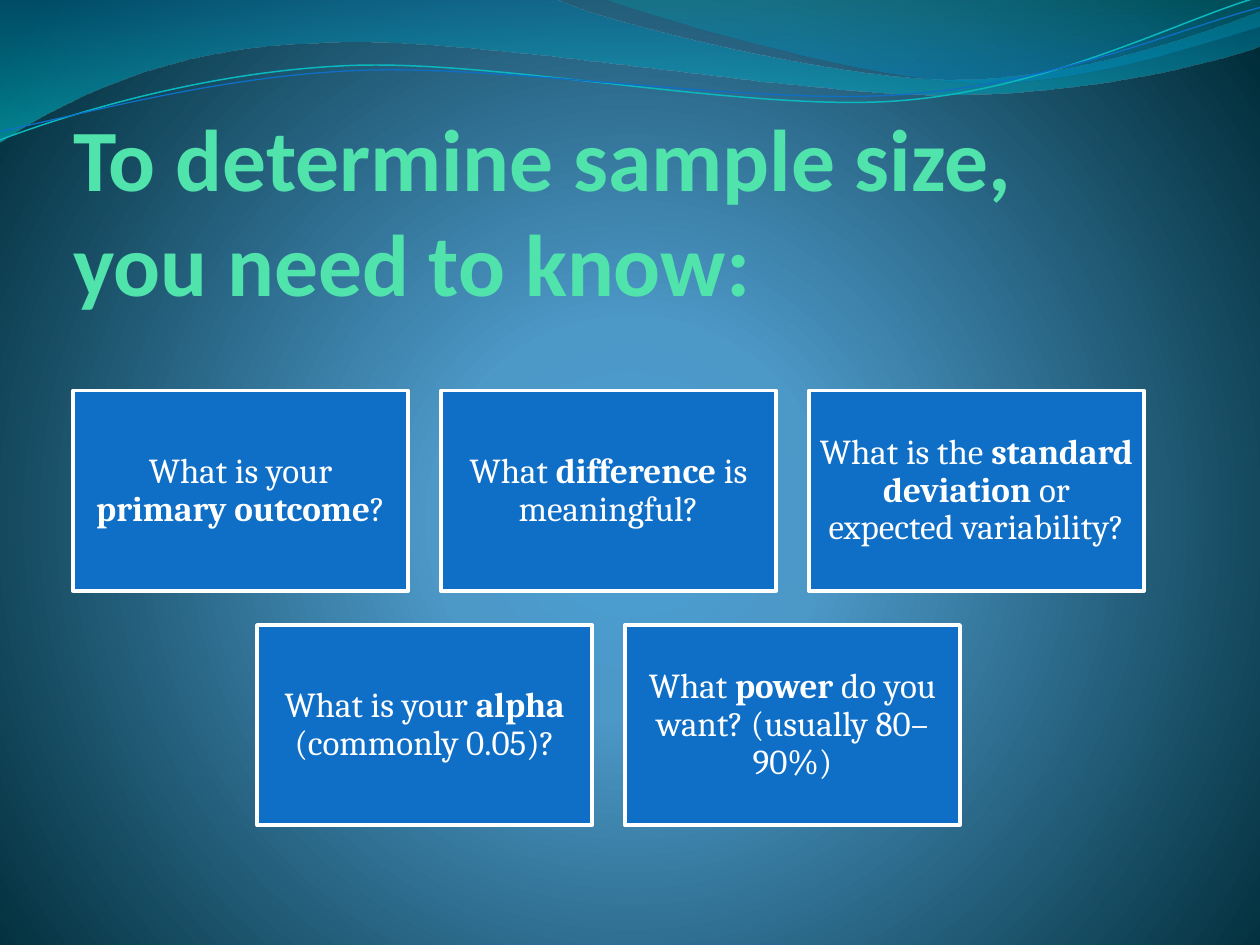
from math import cos, radians, sin

from pptx import Presentation
from pptx.dml.color import RGBColor
from pptx.enum.shapes import MSO_SHAPE
from pptx.enum.text import MSO_ANCHOR, MSO_AUTO_SIZE, PP_ALIGN
from pptx.oxml import parse_xml
from pptx.oxml.ns import nsdecls, qn
from pptx.util import Inches, Pt

WHITE = RGBColor(0xFF, 0xFF, 0xFF)
BLUE = RGBColor(0x0F, 0x6F, 0xC6)
MINT = RGBColor(0x50, 0xE3, 0xAC)
TURQUOISE = RGBColor(0x0A, 0xB8, 0xBF)
SKY = RGBColor(0x4A, 0xA0, 0xD6)
STEEL = RGBColor(0x4C, 0x98, 0xC7)
NIGHT = RGBColor(0x00, 0x2C, 0x38)
OCEAN = RGBColor(0x00, 0x74, 0xA1)
CYAN = RGBColor(0x00, 0xC6, 0xCF)
TEAL = RGBColor(0x00, 0xA1, 0xA9)
AZURE = RGBColor(0x00, 0x8B, 0xBF)

DOWNWARD = '<a:lin ang="5400000" scaled="0"/>'
RADIAL = ('<a:path path="circle"><a:fillToRect l="10000" t="110000" '
          'r="10000" b="100000"/></a:path>')

STRAND_TILT = -2.7
CARD_WIDTH, CARD_HEIGHT = 2.66, 1.59
COLUMN_GAP, ROW_GAP = 0.26, 0.27
CARDS_LEFT, CARDS_TOP, CARDS_WIDTH = 0.58, 3.1, 8.5

BACK_WAVE = [
    (0, 0), (4.4, -0.01),
    (4.76, 0.17, 6.64, 0.63, 7.58, 0.63), (8.53, 0.63, 9.58, 0.26, 10, 0.09),
    (10.01, 0.36),
    (9.83, 0.44, 8.7, 0.76, 7.46, 0.75), (6.22, 0.75, 3.82, 0.28, 2.57, 0.34),
    (1.29, 0.36, 0.46, 0.83, -0.01, 1.13), (0, 0),
]
FRONT_WAVE = [
    (4.79, -0.01),
    (5.09, 0.11, 6.82, 0.62, 7.69, 0.65), (8.56, 0.69, 9.61, 0.32, 10, 0.21),
    (10, 0), (4.79, -0.01),
]
UPPER_STRAND = [
    (0, 1.11),
    (0.48, 0.93, 1.58, 0.57, 2.77, 0.52), (3.95, 0.47, 5.93, 0.89, 7.13, 0.8),
    (8.33, 0.71, 9.38, 0.15, 9.98, -0.02),
]
LOWER_STRAND = [
    (0, 1.04),
    (0.47, 0.96, 1.64, 0.61, 2.83, 0.56), (4.03, 0.51, 5.97, 0.84, 7.17, 0.75),
    (8.36, 0.67, 9.41, 0.21, 10, 0.06),
]

CARD_ROWS = [
    [
        ("What is your ", "primary outcome", "?"),
        ("What ", "difference", " is meaningful?"),
        ("What is the ", "standard deviation", " or expected variability?"),
    ],
    [
        ("What is your ", "alpha", " (commonly 0.05)?"),
        ("What ", "power", " do you want? (usually 80–90%)"),
    ],
]


def apply_gradient(fill, holder, stops, direction):
    """Fill the holder with stops of position, colour and opacity in percent."""
    fill.solid()
    marks = "".join(
        f'<a:gs pos="{position * 1000}"><a:srgbClr val="{color}">'
        f'<a:alpha val="{opacity * 1000}"/></a:srgbClr></a:gs>'
        for position, color, opacity in stops
    )
    gradient = parse_xml(
        f'<a:gradFill {nsdecls("a")} rotWithShape="1">'
        f"<a:gsLst>{marks}</a:gsLst>{direction}</a:gradFill>"
    )
    holder.replace(holder.find(qn("a:solidFill")), gradient)


def level(segments, center, tilt):
    """Turn the segments back by the tilt around the center."""
    (mid_x, mid_y), angle = center, radians(-tilt)
    return [
        tuple(
            value
            for x, y in zip(segment[::2], segment[1::2])
            for value in (
                mid_x + (x - mid_x) * cos(angle) - (y - mid_y) * sin(angle),
                mid_y + (x - mid_x) * sin(angle) + (y - mid_y) * cos(angle),
            )
        )
        for segment in segments
    ]


def add_curve(page, segments, close):
    """Add a freeform of straight and cubic segments."""
    points = [
        (Inches(x), Inches(y))
        for segment in segments
        for x, y in zip(segment[::2], segment[1::2])
    ]
    builder = page.shapes.build_freeform(*points[0])
    builder.add_line_segments(points[1:], close=close)
    curve = builder.convert_to_shape()
    curve.shadow.inherit = False
    lines = iter(curve.element.findall(".//" + qn("a:lnTo")))
    for segment in segments[1:]:
        parts = [next(lines) for _ in range(len(segment) // 2)]
        if len(parts) == 3:
            cubic = parse_xml(f'<a:cubicBezTo {nsdecls("a")}/>')
            parts[0].addprevious(cubic)
            for part in parts:
                cubic.append(part[0])
                part.getparent().remove(part)
    return curve


def add_wave(page, segments, stops):
    """Add a translucent gradient wave."""
    wave = add_curve(page, segments, True)
    wave.line.fill.background()
    apply_gradient(wave.fill, wave.element.spPr, stops, DOWNWARD)


def add_strand(page, segments, center, color, width):
    """Add a thin, slightly tilted curved line."""
    strand = add_curve(page, level(segments, center, STRAND_TILT), False)
    strand.rotation = STRAND_TILT
    strand.fill.background()
    strand.line.color.rgb = color
    strand.line.width = Pt(width)


def set_insets(frame, inset):
    """Give all four sides of a text frame the same inset."""
    frame.margin_left = frame.margin_right = Inches(inset)
    frame.margin_top = frame.margin_bottom = Inches(inset)


def add_span(para, text, font, size, color, bold):
    """Add one formatted run."""
    span = para.add_run()
    span.text = text
    span.font.name = font
    span.font.size = Pt(size)
    span.font.color.rgb = color
    span.font.bold = bold


def add_title(page, text):
    """Place and format the title in front of the waves."""
    title = page.shapes.title
    title.left, title.top = Inches(0.58), Inches(1)
    title.width, title.height = Inches(8.5), Inches(1.49)
    title.element.getparent().append(title.element)
    frame = title.text_frame
    frame.word_wrap = True
    frame.auto_size = MSO_AUTO_SIZE.NONE
    frame.vertical_anchor = MSO_ANCHOR.BOTTOM
    set_insets(frame, 0)
    para = frame.paragraphs[0]
    para.alignment = PP_ALIGN.LEFT
    add_span(para, text, "Calibri", 50, MINT, True)


def add_card(page, left, top, parts):
    """Add a question card with its middle part in bold."""
    box = page.shapes.add_shape(
        MSO_SHAPE.RECTANGLE, Inches(left), Inches(top),
        Inches(CARD_WIDTH), Inches(CARD_HEIGHT),
    )
    box.shadow.inherit = False
    box.fill.solid()
    box.fill.fore_color.rgb = BLUE
    box.line.color.rgb = WHITE
    box.line.width = Pt(2)
    frame = box.text_frame
    frame.word_wrap = True
    frame.vertical_anchor = MSO_ANCHOR.MIDDLE
    set_insets(frame, 0.08)
    para = frame.paragraphs[0]
    para.alignment = PP_ALIGN.CENTER
    para.line_spacing = 0.9
    for index, text in enumerate(parts):
        add_span(para, text, "Cambria", 20, WHITE, index == 1)


def add_cards(page):
    """Lay out the card rows, each centred in the same width."""
    for row, cards in enumerate(CARD_ROWS):
        row_width = len(cards) * (CARD_WIDTH + COLUMN_GAP) - COLUMN_GAP
        left = CARDS_LEFT + (CARDS_WIDTH - row_width) / 2
        top = CARDS_TOP + row * (CARD_HEIGHT + ROW_GAP)
        for column, parts in enumerate(cards):
            add_card(page, left + column * (CARD_WIDTH + COLUMN_GAP), top, parts)


def main():
    """Build and save the slide."""
    deck = Presentation()
    deck.slide_width, deck.slide_height = Inches(10), Inches(7.5)
    page = deck.slides.add_slide(deck.slide_layouts[5])
    fill = page.background.fill
    fill.solid()
    apply_gradient(fill, page.element.find(".//" + qn("p:bgPr")),
                   [(0, SKY, 100), (25, STEEL, 100), (100, NIGHT, 100)], RADIAL)
    add_wave(page, BACK_WAVE, [(0, OCEAN, 45), (100, CYAN, 55)])
    add_wave(page, FRONT_WAVE, [(0, TEAL, 30), (80, AZURE, 45)])
    add_strand(page, UPPER_STRAND, (4.99, 0.58), TURQUOISE, 0.85)
    add_strand(page, LOWER_STRAND, (5, 0.59), BLUE, 0.75)
    add_title(page, "To determine sample size, you need to know:")
    add_cards(page)
    deck.save("out.pptx")


if __name__ == "__main__":
    main()
